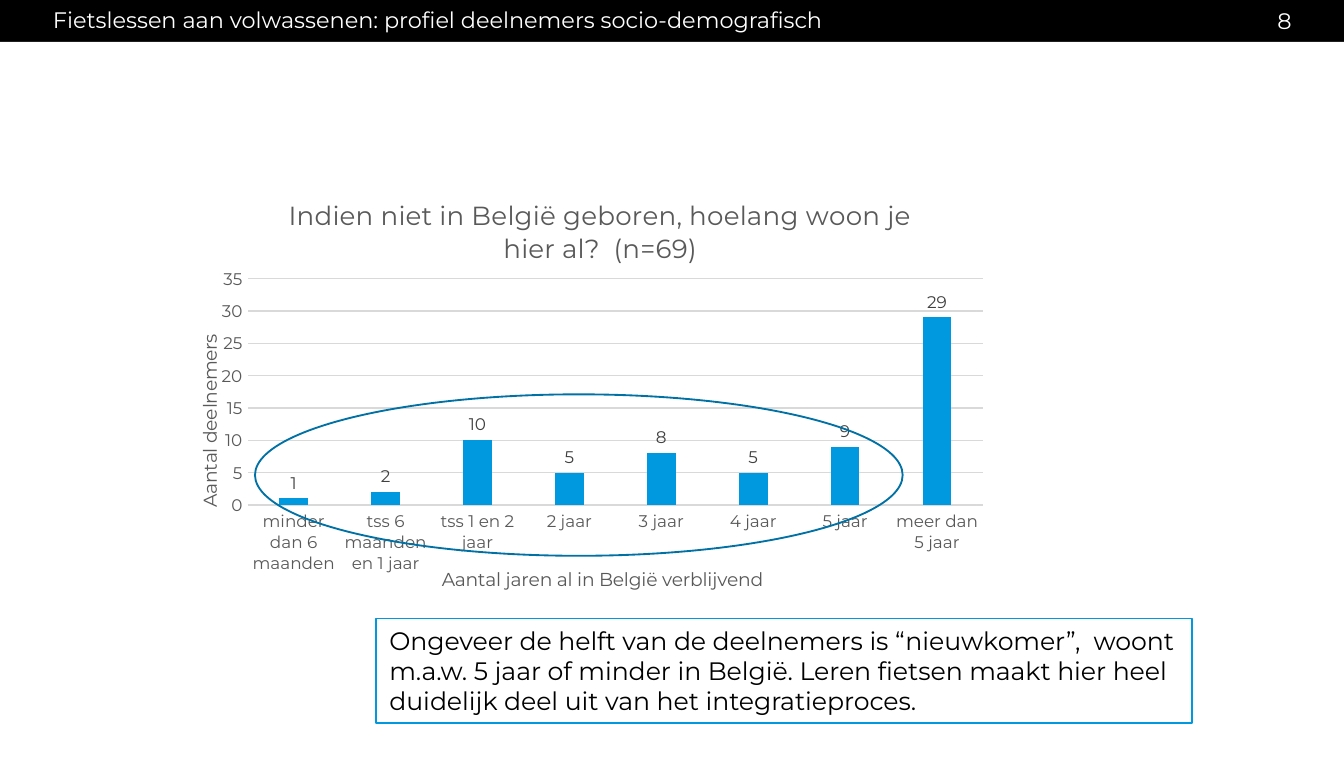
"""Build the slide on how long the cycling-course participants have lived in Belgium."""
from lxml.etree import fromstring
from pptx import Presentation
from pptx.chart.data import CategoryChartData
from pptx.dml.color import RGBColor
from pptx.enum.chart import XL_CHART_TYPE, XL_LABEL_POSITION, XL_TICK_MARK
from pptx.enum.shapes import MSO_SHAPE
from pptx.enum.text import MSO_ANCHOR, MSO_AUTO_SIZE, PP_ALIGN
from pptx.oxml.ns import nsdecls
from pptx.util import Cm, Pt

BLACK = RGBColor(0x00, 0x00, 0x00)
WHITE = RGBColor(0xFF, 0xFF, 0xFF)
BLUE = RGBColor(0x00, 0x99, 0xDF)
DARK_BLUE = RGBColor(0x00, 0x71, 0xA5)
GREY = RGBColor(0x59, 0x59, 0x59)
LABEL_GREY = RGBColor(0x40, 0x40, 0x40)
GRID_GREY = RGBColor(0xD9, 0xD9, 0xD9)


def style(font, size, color):
    font.name = "Montserrat"
    font.size = Pt(size)
    font.bold = False
    font.color.rgb = color


def write(frame, text, size, color, align=PP_ALIGN.LEFT):
    frame.word_wrap = True
    frame.vertical_anchor = MSO_ANCHOR.MIDDLE
    paragraph = frame.paragraphs[0]
    paragraph.alignment = align
    run = paragraph.add_run()
    run.text = text
    style(run.font, size, color)
    return paragraph


prs = Presentation()
prs.slide_width, prs.slide_height = Cm(25.4), Cm(14.3)
slide = prs.slides.add_slide(prs.slide_layouts[5])
slide.background.fill.solid()
slide.background.fill.fore_color.rgb = BLACK
shapes = slide.shapes

page = shapes.add_shape(MSO_SHAPE.RECTANGLE, 0, Cm(0.79), Cm(25.4), Cm(13.51))
page.shadow.inherit = False
page.fill.solid()
page.fill.fore_color.rgb = WHITE
page.line.fill.background()

heading = shapes.title
heading.left, heading.top, heading.width, heading.height = Cm(1), Cm(0), Cm(21.9), Cm(0.79)
page_number = shapes.add_textbox(Cm(18.52), Cm(0), Cm(5.89), Cm(0.79))
for header in (heading, page_number):
    frame = header.text_frame
    frame.auto_size = MSO_AUTO_SIZE.NONE
    frame.margin_left = frame.margin_right = frame.margin_top = frame.margin_bottom = 0
write(heading.text_frame, "Fietslessen aan volwassenen: profiel deelnemers socio-demografisch",
      12, WHITE).line_spacing = 0.9
write(page_number.text_frame, "8", 12, WHITE, PP_ALIGN.RIGHT)

residence = CategoryChartData()
residence.categories = ["minder dan 6 maanden", "tss 6 maanden en 1 jaar", "tss 1 en 2 jaar",
                        "2 jaar", "3 jaar", "4 jaar", "5 jaar", "meer dan 5 jaar"]
residence.add_series("Series 1", [1, 2, 10, 5, 8, 5, 9, 29])
chart = shapes.add_chart(XL_CHART_TYPE.COLUMN_CLUSTERED, Cm(3.65), Cm(3.35),
                         Cm(15.39), Cm(7.92), residence).chart
style(chart.font, 10, BLACK)
chart.has_legend = False
question = chart.chart_title.text_frame.paragraphs[0].add_run()
question.text = "Indien niet in België geboren, hoelang woon je hier al?  (n=69)"
style(question.font, 14, GREY)

years, participants = chart.category_axis, chart.value_axis
for axis, caption in ((years, "Aantal jaren al in België verblijvend"),
                      (participants, "Aantal deelnemers")):
    axis.major_tick_mark = axis.minor_tick_mark = XL_TICK_MARK.NONE
    style(axis.tick_labels.font, 9, GREY)
    run = axis.axis_title.text_frame.paragraphs[0].add_run()
    run.text = caption
    style(run.font, 10, GREY)
participants.minimum_scale, participants.maximum_scale, participants.major_unit = 0, 35, 5
participants.format.line.fill.background()
for line in (years.format.line, participants.major_gridlines.format.line):
    line.color.rgb = GRID_GREY
    line.width = Pt(0.75)

columns = chart.plots[0]
columns.vary_by_categories = False
columns.gap_width, columns.overlap = 219, -27
fill = columns.series[0].format.fill
fill.solid()
fill.fore_color.rgb = BLUE
labels = columns.series[0].data_labels
labels.show_value = True
labels.position = XL_LABEL_POSITION.OUTSIDE_END
style(labels.font, 9, LABEL_GREY)

plot_area = chart.element.chart.plotArea
for automatic in plot_area.findall("{*}layout"):
    plot_area.remove(automatic)
plot_area.insert(0, fromstring(
    f'<c:layout {nsdecls("c")}><c:manualLayout><c:layoutTarget val="inner"/>'
    '<c:xMode val="edge"/><c:yMode val="edge"/><c:x val="0.067"/><c:y val="0.242"/>'
    '<c:w val="0.903"/><c:h val="0.54"/></c:manualLayout></c:layout>'))

conclusion = shapes.add_shape(MSO_SHAPE.RECTANGLE, Cm(7.11), Cm(11.68), Cm(15.42), Cm(1.98))
newcomers = shapes.add_shape(MSO_SHAPE.OVAL, Cm(4.82), Cm(7.45), Cm(12.24), Cm(3.05))
for outline, color, width in ((conclusion, BLUE, 0.75), (newcomers, DARK_BLUE, 1)):
    outline.shadow.inherit = False
    outline.fill.background()
    outline.line.color.rgb = color
    outline.line.width = Pt(width)
write(conclusion.text_frame,
      "Ongeveer de helft van de deelnemers is “nieuwkomer”,  woont m.a.w. 5 jaar of minder "
      "in België. Leren fietsen maakt hier heel duidelijk deel uit van het integratieproces.",
      13.5, BLACK)
conclusion.text_frame.auto_size = MSO_AUTO_SIZE.SHAPE_TO_FIT_TEXT

prs.save("out.pptx")
